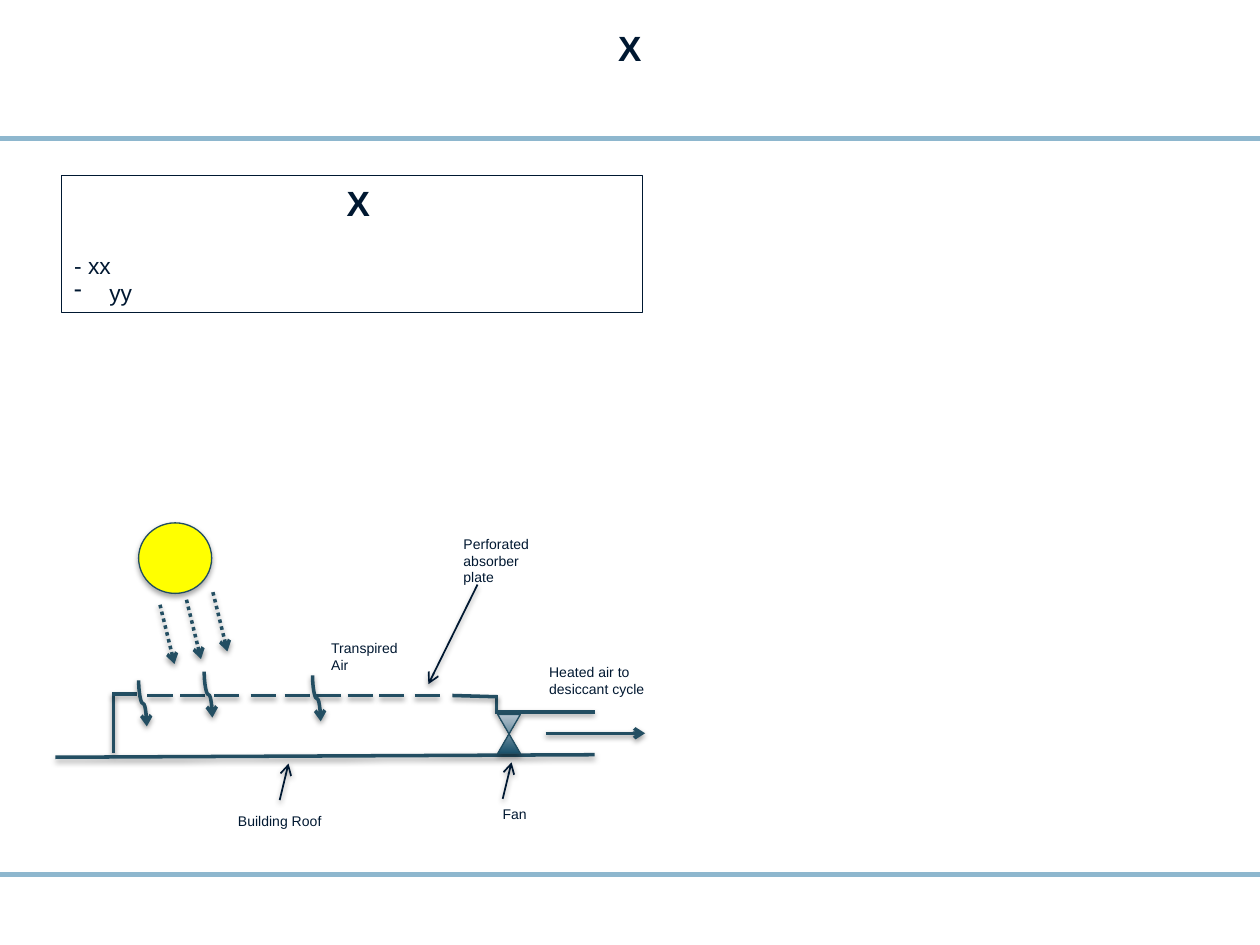
from dataclasses import dataclass

from lxml.etree import SubElement
from pptx import Presentation
from pptx.dml.color import RGBColor
from pptx.enum.dml import MSO_LINE
from pptx.enum.shapes import MSO_CONNECTOR, MSO_SHAPE
from pptx.enum.text import MSO_ANCHOR, PP_ALIGN
from pptx.oxml.ns import qn
from pptx.util import Inches, Pt

INK = "001831"
STEEL = "234E62"
OUTLINE = "214D61"
RULE = "8EB7CE"


@dataclass
class Region:
    """A box in inches, divided into columns and rows."""
    left: float
    top: float
    width: float
    height: float
    columns: float = 1
    rows: float = 1

    def point(self, column, row):
        return (Inches(self.left + column * self.width / self.columns),
                Inches(self.top + row * self.height / self.rows))

    def cell(self, column=0, row=0, across=1, down=1):
        return (*self.point(column, row),
                Inches(across * self.width / self.columns),
                Inches(down * self.height / self.rows))


def color(value):
    return RGBColor.from_string(value)


def set_shadow(shape, opacity=0, distance=0):
    """Replace any inherited shadow; zero opacity leaves none."""
    properties = shape._element.spPr
    effects = properties.find(qn("a:effectLst"))
    if effects is None:
        effects = SubElement(properties, qn("a:effectLst"))
    if opacity:
        outer = SubElement(effects, qn("a:outerShdw"), blurRad=str(Pt(3.1)),
                           dist=str(Pt(distance)), dir="5400000", rotWithShape="0")
        black = SubElement(outer, qn("a:srgbClr"), val="000000")
        SubElement(black, qn("a:alpha"), val=str(opacity * 1000))


def style_line(connector, line_color, width, arrow=False, dash=None):
    line = connector.line
    line.color.rgb = color(line_color)
    line.width = Pt(width)
    if dash:
        line.dash_style = dash
    if arrow:
        SubElement(line._get_or_add_ln(), qn("a:tailEnd"), type="arrow")


def add_line(slide, region, start, end, line_color=STEEL, width=2,
             arrow=False, dash=None, shadow=True):
    connector = slide.shapes.add_connector(
        MSO_CONNECTOR.STRAIGHT, *region.point(*start), *region.point(*end))
    style_line(connector, line_color, width, arrow, dash)
    set_shadow(connector, 38 if shadow else 0, 1.6)


def add_air_curve(slide, region, start, across, down):
    """Draw a downward S-curve: a horizontal connector turned a quarter."""
    column, row = start[0] + across / 2, start[1] + down / 2
    connector = slide.shapes.add_connector(
        MSO_CONNECTOR.CURVE,
        *region.point(column + down / 2, row - across / 2),
        *region.point(column - down / 2, row + across / 2))
    connector._element.spPr.xfrm.set("rot", "16200000")
    style_line(connector, STEEL, 2, arrow=True)
    set_shadow(connector, 38, 1.6)


def add_run(paragraph, text, size, bold=False):
    run = paragraph.add_run()
    run.text = text
    run.font.name = "Arial"
    run.font.size = Pt(size)
    run.font.bold = bold
    run.font.color.rgb = color(INK)


def add_heading(paragraph, text):
    paragraph.alignment = PP_ALIGN.CENTER
    add_run(paragraph, text, 20, bold=True)


def add_symbol(slide, region, kind, cell):
    shape = slide.shapes.add_shape(kind, *region.cell(*cell))
    shape.shadow.inherit = False
    shape.line.color.rgb = color(OUTLINE)
    shape.line.width = Pt(0.75)
    set_shadow(shape, 35, 1.8)
    return shape


def add_label(slide, region, text, cell):
    frame = slide.shapes.add_textbox(*region.cell(*cell)).text_frame
    frame.word_wrap = True
    add_run(frame.paragraphs[0], text, 8)


def add_rules(slide, region):
    for row in (1.1, 6.94):
        add_line(slide, region, (0, row), (region.columns, row), RULE, 3, shadow=False)


def add_title(slide, region):
    frame = slide.shapes.add_textbox(*region.cell()).text_frame
    frame.word_wrap = True
    frame.margin_left = frame.margin_right = Inches(0.08)
    frame.margin_top = frame.margin_bottom = 0
    add_heading(frame.paragraphs[0], "X")


def add_summary(slide, region):
    shape = slide.shapes.add_shape(MSO_SHAPE.RECTANGLE, *region.cell())
    shape.shadow.inherit = False
    shape.fill.background()
    shape.line.color.rgb = color(INK)
    shape.line.width = Pt(0.75)
    frame = shape.text_frame
    frame.word_wrap = True
    frame.vertical_anchor = MSO_ANCHOR.TOP
    frame.margin_right = 0
    add_heading(frame.paragraphs[0], "X")

    first, second = frame.add_paragraph(), frame.add_paragraph()
    first.space_before = Pt(16)
    properties = second._p.get_or_add_pPr()
    properties.set("marL", str(Inches(0.28)))
    properties.set("indent", str(-Inches(0.28)))
    SubElement(properties, qn("a:buChar"), char="-")
    for paragraph, text in ((first, "- xx"), (second, "yy")):
        paragraph.alignment = PP_ALIGN.LEFT
        add_run(paragraph, text, 13)


def add_collector(slide, region):
    """Draw the solar air collector on its roof, with sun, fan and labels."""
    housing = [
        ((5, 14.1), (5, 18.8)), ((0.4, 19.1), (43.2, 18.9)),
        ((35.4, 15.4), (35.4, 14.2)), ((4.9, 14.1), (6.9, 14.1)),
        ((31.9, 14.2), (35.5, 14.3)), ((35.3, 15.5), (43.2, 15.5))]
    plate_starts = (7.7, 10.3, 13, 15.9, 18.6, 21.1, 23.6, 26.1, 28.9)
    plate = [((column, 14.2), (column + 2, 14.2)) for column in plate_starts]
    for start, end in housing + plate:
        add_line(slide, region, start, end)
    add_line(slide, region, (39.3, 17.2), (47.2, 17.2), arrow=True)

    for start in ((7, 13), (12.2, 12.3), (20.8, 12.6)):
        add_air_curve(slide, region, start, 0.65, 3.65)

    sun = add_symbol(slide, region, MSO_SHAPE.OVAL, (7, 0.5, 5.8, 5.6))
    sun.fill.solid()
    sun.fill.fore_color.rgb = color("FFFF00")
    for column, row in ((10.8, 6.6), (12.9, 6), (8.7, 7)):
        add_line(slide, region, (column, row), (column + 1.15, row + 4.7),
                 arrow=True, dash=MSO_LINE.ROUND_DOT)

    fan = add_symbol(slide, region, MSO_SHAPE.FLOWCHART_COLLATE, (35.5, 15.7, 1.8, 3.1))
    fan.fill.gradient()
    fan.fill.gradient_angle = 90
    for stop, position, value in zip(fan.fill.gradient_stops, (0, 1), ("1A516B", "B4C3CF")):
        stop.position = position
        stop.color.rgb = color(value)

    for start, end in (((35.9, 22.4), (36.6, 19.5)), ((18.2, 22.5), (18.9, 19.6)),
                       ((33.9, 5.4), (30, 13.3))):
        add_line(slide, region, start, end, INK, 1, arrow=True)
    for text, cell in (
            ("Heated air to desiccant cycle", (38.6, 11.2, 10.5, 3.7)),
            ("Transpired Air", (21.3, 9.3, 7.8, 3.7)),
            ("Fan", (34.9, 22.4, 9.1, 2.4)),
            ("Building Roof", (13.9, 23, 9.1, 2.4)),
            ("Perforated absorber plate", (31.8, 1, 7.8, 5))):
        add_label(slide, region, text, cell)


def main():
    presentation = Presentation()
    presentation.slide_width, presentation.slide_height = Inches(10), Inches(7.5)
    slide = presentation.slides.add_slide(presentation.slide_layouts[6])
    add_rules(slide, Region(0, 0, 10, 7.5, 10, 7.5))
    add_title(slide, Region(0, 0.21, 10, 0.52))
    add_summary(slide, Region(0.49, 1.39, 4.61, 1.09))
    add_collector(slide, Region(0.4, 4.1, 5, 2.6, 50, 26))
    presentation.save("out.pptx")


if __name__ == "__main__":
    main()
